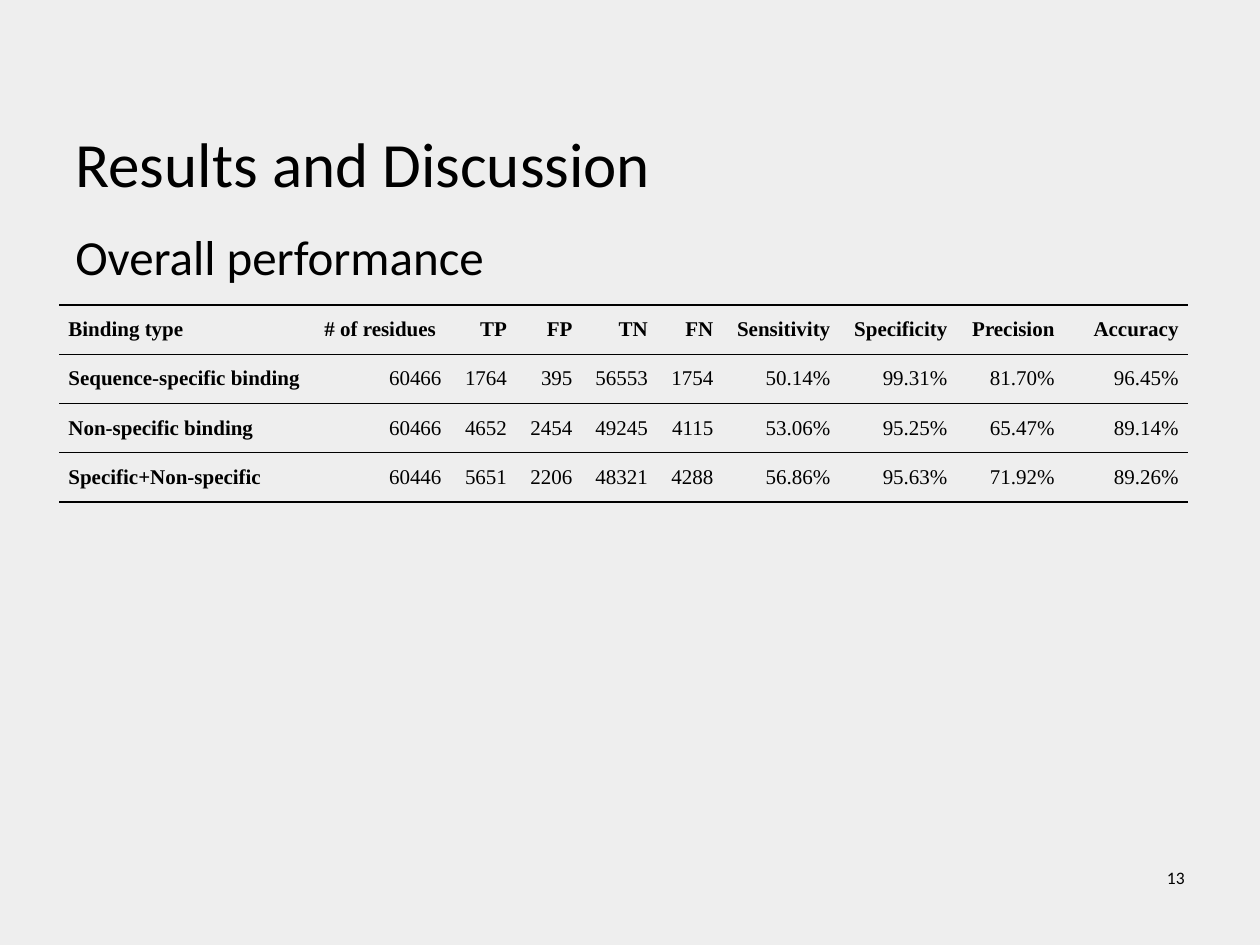
from dataclasses import dataclass

from lxml.etree import SubElement
from pptx import Presentation
from pptx.dml.color import RGBColor
from pptx.enum.text import MSO_ANCHOR, PP_ALIGN
from pptx.oxml.ns import qn
from pptx.util import Cm, Pt


@dataclass(frozen=True)
class Theme:
    """Colours, fonts and sizes of the slide."""
    background: str = "EEEEEE"
    ink: str = "000000"
    sans: str = "Calibri"
    serif: str = "Times New Roman"
    title: int = 36
    heading: int = 28
    table: int = 12
    number: int = 10
    rule: int = 1


THEME = Theme()
COLUMN_WIDTHS = (5.16, 2.74, 1.32, 1.32, 1.52, 1.32, 2.36, 2.36, 2.16, 2.5)
PERFORMANCE = (
    ("Binding type", "# of residues", "TP", "FP", "TN", "FN",
     "Sensitivity", "Specificity", "Precision", "Accuracy"),
    ("Sequence-specific binding", "60466", "1764", "395", "56553", "1754",
     "50.14%", "99.31%", "81.70%", "96.45%"),
    ("Non-specific binding", "60466", "4652", "2454", "49245", "4115",
     "53.06%", "95.25%", "65.47%", "89.14%"),
    ("Specific+Non-specific", "60446", "5651", "2206", "48321", "4288",
     "56.86%", "95.63%", "71.92%", "89.26%"),
)


def add_run(p, text, size, font=THEME.sans, bold=False):
    """Append one formatted run to a paragraph."""
    r = p.add_run()
    r.text = text
    r.font.size = Pt(size)
    r.font.name = font
    r.font.bold = bold
    r.font.color.rgb = RGBColor.from_string(THEME.ink)


def add_title(s, text, left, top, width, height):
    """Place the title placeholder in its box."""
    sp = s.shapes.title
    sp.left, sp.top, sp.width, sp.height = map(Cm, (left, top, width, height))
    tf = sp.text_frame
    tf.word_wrap = True
    tf.vertical_anchor = MSO_ANCHOR.BOTTOM
    p = tf.paragraphs[0]
    p.alignment = PP_ALIGN.LEFT
    add_run(p, text, THEME.title)


def add_text(s, text, size, left, top, width, height, align=PP_ALIGN.LEFT):
    """Place a single line of text in its box."""
    tf = s.shapes.add_textbox(*map(Cm, (left, top, width, height))).text_frame
    tf.word_wrap = True
    p = tf.paragraphs[0]
    p.alignment = align
    add_run(p, text, size)


def set_borders(cell):
    """Rule a cell above and below and leave its sides open."""
    tcPr = cell._tc.get_or_add_tcPr()
    for side in ("L", "R", "T", "B"):
        ln = SubElement(tcPr, qn(f"a:ln{side}"), w=str(Pt(THEME.rule)))
        if side in "LR":
            SubElement(ln, qn("a:noFill"))
        else:
            fill = SubElement(ln, qn("a:solidFill"))
            SubElement(fill, qn("a:srgbClr"), val=THEME.ink)


def add_performance_table(s, rows, left, top, height):
    """Place the ruled table of results in its box."""
    box = map(Cm, (left, top, sum(COLUMN_WIDTHS), height))
    table = s.shapes.add_table(len(rows), len(COLUMN_WIDTHS), *box).table
    table.first_row = table.horz_banding = False
    for column, width in zip(table.columns, COLUMN_WIDTHS):
        column.width = Cm(width)
    for i, row in enumerate(rows):
        for j, text in enumerate(row):
            cell = table.cell(i, j)
            set_borders(cell)
            cell.fill.background()
            cell.vertical_anchor = MSO_ANCHOR.MIDDLE
            cell.margin_left = cell.margin_right = Cm(0.19)
            cell.margin_top = cell.margin_bottom = 0
            p = cell.text_frame.paragraphs[0]
            is_left = j == 0 or (i, j) == (0, 1)
            p.alignment = PP_ALIGN.LEFT if is_left else PP_ALIGN.RIGHT
            add_run(p, text, THEME.table, THEME.serif, bold=i == 0 or j == 0)


def build_results_slide(prs):
    """Build the slide of overall results."""
    s = prs.slides.add_slide(prs.slide_layouts[5])
    s.background.fill.solid()
    s.background.fill.fore_color.rgb = RGBColor.from_string(THEME.background)
    add_title(s, "Results and Discussion", 1.27, 0.99, 22.86, 3.18)
    add_text(s, "Overall performance", THEME.heading, 1.27, 4.45, 22.86, 1.5)
    add_text(s, "13", THEME.number, 18.21, 17.35, 5.92, 1.32, PP_ALIGN.RIGHT)
    add_performance_table(s, PERFORMANCE, 1.19, 6.15, 3.97)


def main():
    """Create and save the presentation."""
    prs = Presentation()
    prs.slide_width, prs.slide_height = Cm(25.4), Cm(19.05)
    build_results_slide(prs)
    prs.save("out.pptx")


if __name__ == "__main__":
    main()
